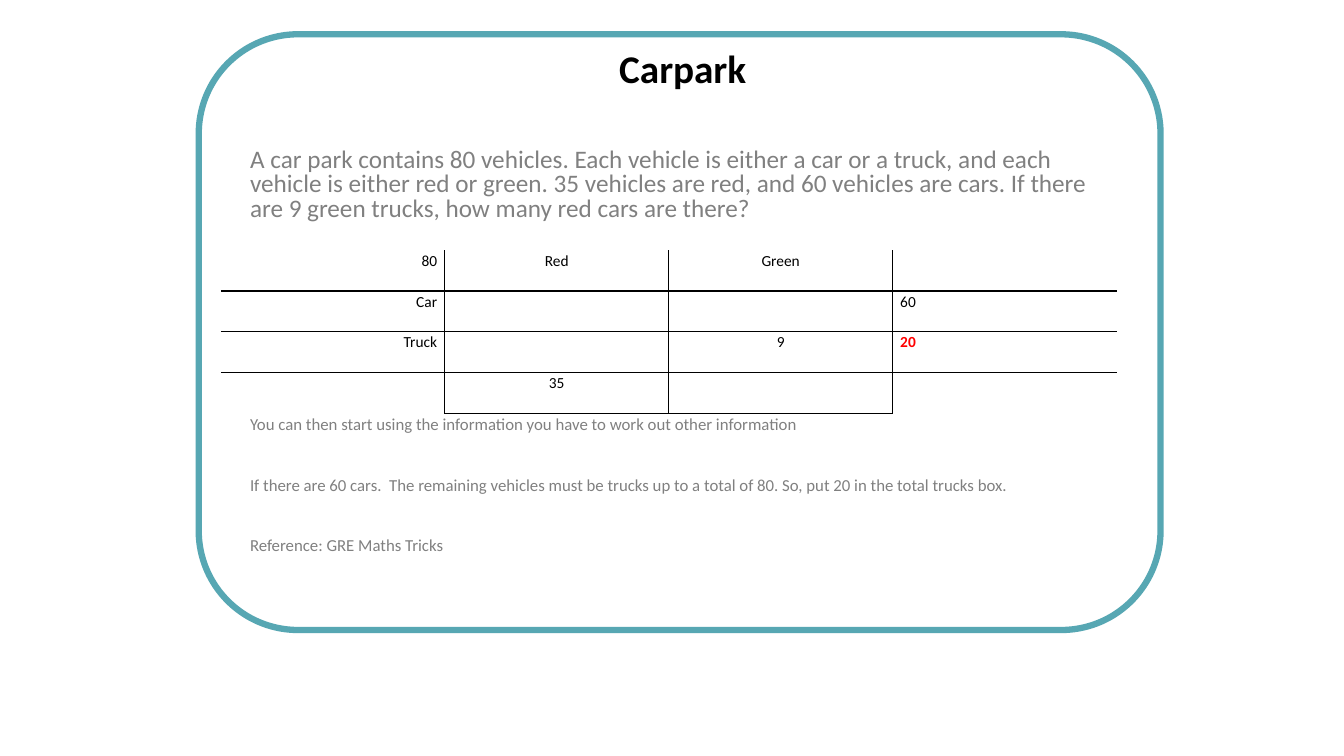
from dataclasses import dataclass

from lxml.etree import SubElement
from pptx import Presentation
from pptx.dml.color import RGBColor
from pptx.enum.shapes import MSO_SHAPE
from pptx.enum.text import MSO_ANCHOR, MSO_AUTO_SIZE, PP_ALIGN as Align
from pptx.oxml.ns import qn
from pptx.util import Pt


@dataclass(frozen=True)
class Theme:
    font: str = "Calibri"
    black: RGBColor = RGBColor(0, 0, 0)
    grey: RGBColor = RGBColor(0x80, 0x80, 0x80)
    red: RGBColor = RGBColor(0xFF, 0, 0)
    teal: RGBColor = RGBColor(0x57, 0xA7, 0xB3)
    title_size: int = 28
    question_size: int = 18
    note_size: int = 12
    table_size: int = 11


THEME = Theme()

# Text and space before, in points; the first gap leaves room for the table.
BODY = [
    ("A car park contains 80 vehicles. Each vehicle is either a car or a truck, "
     "and each vehicle is either red or green. 35 vehicles are red, and 60 vehicles "
     "are cars. If there are 9 green trucks, how many red cars are there?", 0),
    ("You can then start using the information you have to work out other "
     "information", 140),
    ("If there are 60 cars.  The remaining vehicles must be trucks up to a total "
     "of 80. So, put 20 in the total trucks box.", 31.7),
    ("Reference: GRE Maths Tricks", 31.7),
]
VEHICLES = [
    ["80", "Red", "Green", ""],
    ["Car", "", "", "60"],
    ["Truck", "", "9", "20"],
    ["", "35", "", ""],
]
COLUMN_ALIGN = [Align.RIGHT, Align.CENTER, Align.CENTER, Align.LEFT]
DEDUCED_CELL = (2, 3)


def apply(target, **values):
    for name, value in values.items():
        setattr(target, name, value)


def style_font(font, size, color, bold=False):
    apply(font, name=THEME.font, size=Pt(size), bold=bold)
    font.color.rgb = color


def place(shape, left, top, width, height):
    apply(shape, left=Pt(left), top=Pt(top), width=Pt(width), height=Pt(height))
    apply(shape.text_frame, word_wrap=True, auto_size=MSO_AUTO_SIZE.NONE,
          vertical_anchor=MSO_ANCHOR.TOP)


def add_frame(slide):
    frame = slide.shapes.add_shape(MSO_SHAPE.ROUNDED_RECTANGLE,
                                   Pt(142), Pt(24.5), Pt(687), Pt(425.5))
    frame.shadow.inherit = False
    frame.fill.background()
    frame.line.color.rgb = THEME.teal
    frame.line.width = Pt(4.5)
    slide.shapes.title._element.addprevious(frame._element)


def fill_title(title, text):
    place(title, 157.7, 28, 660, 101.5)
    paragraph = title.text_frame.paragraphs[0]
    paragraph.text = text
    paragraph.alignment = Align.CENTER
    style_font(paragraph.runs[0].font, THEME.title_size, THEME.black, bold=True)


def fill_body(body, entries):
    place(body, 171.4, 103, 616.3, 309)
    frame = body.text_frame
    frame.text = "\n".join(text for text, _ in entries)
    for index, (paragraph, (_, gap)) in enumerate(zip(frame.paragraphs, entries)):
        apply(paragraph, line_spacing=0.8, space_before=Pt(gap), space_after=Pt(0))
        properties = paragraph._p.get_or_add_pPr()
        properties.set("marL", "0")
        properties.set("indent", "0")
        SubElement(properties, qn("a:buNone"))
        size = THEME.note_size if index else THEME.question_size
        style_font(paragraph.runs[0].font, size, THEME.grey)


def set_borders(cell, visible):
    """Draw the cell sides named in visible (from L, R, T, B) and clear the rest."""
    properties = cell._tc.get_or_add_tcPr()
    for side in "LRTB":
        line = SubElement(properties, qn(f"a:ln{side}"), w=str(Pt(1)))
        if side in visible:
            fill = SubElement(line, qn("a:solidFill"))
            SubElement(fill, qn("a:srgbClr"), val=str(THEME.black))
        else:
            SubElement(line, qn("a:noFill"))


def visible_sides(row, column):
    """Inner grid lines show; of the outer ones, only below the middle columns."""
    last = len(VEHICLES) - 1
    shown = {"L": column > 0, "R": column < last, "T": row > 0,
             "B": row < last or 0 < column < last}
    return [side for side, is_shown in shown.items() if is_shown]


def add_vehicle_table(slide):
    row_count, column_count = len(VEHICLES), len(VEHICLES[0])
    table = slide.shapes.add_table(row_count, column_count, Pt(157.7), Pt(178.6),
                                   Pt(640), Pt(116.8)).table
    apply(table, first_row=False, horz_banding=False)
    for row, texts in enumerate(VEHICLES):
        for column, text in enumerate(texts):
            cell = table.cell(row, column)
            apply(cell, margin_left=Pt(5.4), margin_right=Pt(5.4),
                  margin_top=0, margin_bottom=0)
            set_borders(cell, visible_sides(row, column))
            cell.fill.background()
            paragraph = cell.text_frame.paragraphs[0]
            paragraph.text = text
            apply(paragraph, alignment=COLUMN_ALIGN[column], line_spacing=1.07)
            deduced = (row, column) == DEDUCED_CELL
            style_font(paragraph.font, THEME.table_size,
                       THEME.red if deduced else THEME.black, bold=deduced)
            for run in paragraph.runs:
                style_font(run.font, THEME.table_size,
                           THEME.red if deduced else THEME.black, bold=deduced)


def main():
    presentation = Presentation()
    apply(presentation, slide_width=Pt(960), slide_height=Pt(540))
    slide = presentation.slides.add_slide(presentation.slide_layouts[1])
    add_frame(slide)
    fill_title(slide.shapes.title, "Carpark")
    fill_body(slide.placeholders[1], BODY)
    add_vehicle_table(slide)
    presentation.save("out.pptx")


if __name__ == "__main__":
    main()
